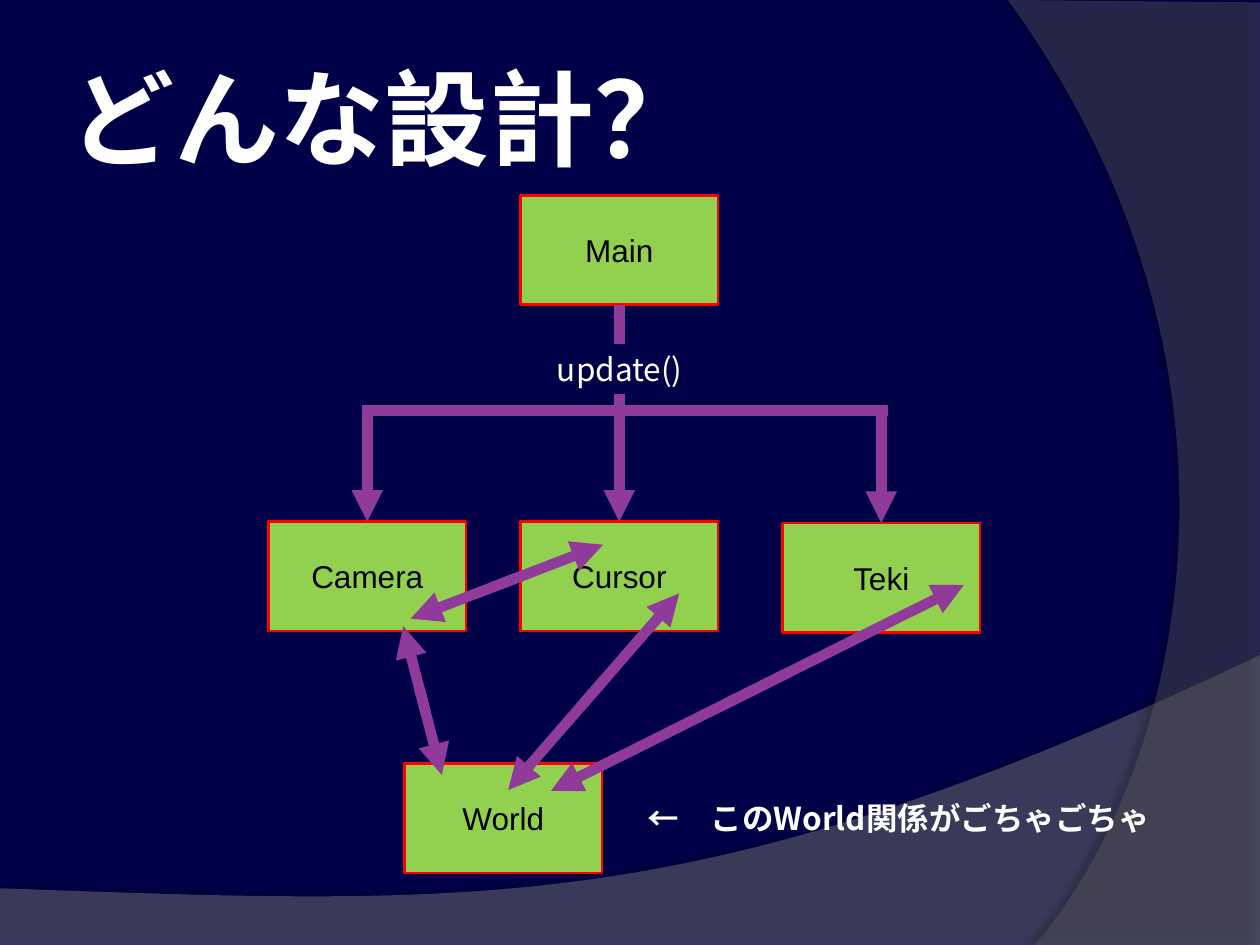
from dataclasses import dataclass
from typing import Any

from lxml.etree import SubElement
from pptx import Presentation
from pptx.dml.color import RGBColor
from pptx.enum.shapes import MSO_CONNECTOR, MSO_SHAPE
from pptx.enum.text import MSO_ANCHOR, MSO_AUTO_SIZE, PP_ALIGN
from pptx.oxml.ns import qn
from pptx.util import Pt

BACKDROP, WHITE, BLACK = "000049", "FFFFFF", "000000"
GREEN, RED, PURPLE = "92D050", "FF0000", "903A9A"
LATIN, JAPANESE = "Arial", "Noto Sans CJK JP"
BOX_WIDTH, BOX_HEIGHT = 113, 62.6
TOP, BOTTOM = 0, 2
HALF_REACH = 0.58
CURVE_STEPS = 60

Point = tuple[float, float]


@dataclass
class ClassBox:
    name: str
    left: float
    top: float

    @property
    def top_middle(self) -> Point:
        return self.left + BOX_WIDTH / 2, self.top

    @property
    def bottom_middle(self) -> Point:
        return self.left + BOX_WIDTH / 2, self.top + BOX_HEIGHT


@dataclass
class Swoosh:
    corners: list[Point]
    curve: tuple[Point, Point, Point, Point]
    fill: str
    opacity: int
    shadow_opacity: int
    shadow_distance: float
    shadow_angle: int


@dataclass
class Relation:
    start: Point
    end: Point


MAIN = ClassBox("Main", 297.4, 111.6)
CAMERA = ClassBox("Camera", 153.4, 298.1)
CURSOR = ClassBox("Cursor", 297.4, 298.1)
TEKI = ClassBox("Teki", 447.1, 298.8)
WORLD = ClassBox("World", 231.1, 436.3)

SWOOSHES = [
    Swoosh([(0, 540), (720, 540)],
           ((720, 374.4), (402.5, 524.9), (281.5, 517.7), (0, 507.6)),
           "7F7F7F", 45, 35, 3.5, 270),
    Swoosh([(720, 1.4), (720, 540)],
           ((591.1, 540), (673.2, 445.7), (733, 216), (576, 0)),
           "5E5E5E", 40, 45, 4, 180),
]

RELATIONS = [
    Relation((252.5, 442.8), (230.4, 357.8)),
    Relation((314.8, 452), (550.8, 334.3)),
    Relation((290.4, 451.5), (388.1, 339.1)),
    Relation((234.7, 353.5), (344.6, 311.3)),
]


def color(hex_code: str) -> RGBColor:
    return RGBColor.from_string(hex_code)


def paint(fill: Any, hex_code: str) -> None:
    fill.solid()
    fill.fore_color.rgb = color(hex_code)


def write(frame: Any, words: str, size: float, face: str, hex_code: str,
          align: PP_ALIGN, bold: bool = False) -> None:
    frame.word_wrap = True
    frame.text = words
    paragraph = frame.paragraphs[0]
    paragraph.alignment = align
    font = paragraph.font
    font.size, font.bold, font.name = Pt(size), bold, face
    font.color.rgb = color(hex_code)
    defaults = paragraph._p.get_or_add_pPr().get_or_add_defRPr()
    SubElement(defaults, qn("a:ea"), typeface=face)


def bezier(curve: tuple[Point, Point, Point, Point]) -> list[Point]:
    points = []
    for step in range(CURVE_STEPS + 1):
        t = step / CURVE_STEPS
        weights = ((1 - t) ** 3, 3 * t * (1 - t) ** 2, 3 * t * t * (1 - t), t ** 3)
        x, y = (sum(w * p[axis] for w, p in zip(weights, curve)) for axis in (0, 1))
        points.append((x, y))
    return points


def draw_swoosh(shapes: Any, swoosh: Swoosh) -> None:
    outline = [(Pt(x), Pt(y)) for x, y in swoosh.corners + bezier(swoosh.curve)]
    builder = shapes.build_freeform(*outline[0])
    builder.add_line_segments(outline[1:], close=True)
    shape = builder.convert_to_shape()
    paint(shape.fill, swoosh.fill)
    shape.line.fill.background()
    shape.shadow.inherit = False
    properties = shape._element.spPr
    fill_color = properties.find(qn("a:solidFill")).find(qn("a:srgbClr"))
    SubElement(fill_color, qn("a:alpha"), val=str(swoosh.opacity * 1000))
    shadow = SubElement(
        properties.find(qn("a:effectLst")), qn("a:outerShdw"),
        blurRad=str(Pt(4)), dist=str(Pt(swoosh.shadow_distance)),
        dir=str(swoosh.shadow_angle * 60000), rotWithShape="0")
    shadow_color = SubElement(shadow, qn("a:srgbClr"), val=BLACK)
    SubElement(shadow_color, qn("a:alpha"), val=str(swoosh.shadow_opacity * 1000))


def draw_box(shapes: Any, box: ClassBox) -> Any:
    shape = shapes.add_shape(MSO_SHAPE.RECTANGLE, Pt(box.left), Pt(box.top),
                             Pt(BOX_WIDTH), Pt(BOX_HEIGHT))
    paint(shape.fill, GREEN)
    shape.line.color.rgb = color(RED)
    shape.line.width = Pt(1.5)
    shape.shadow.inherit = False
    shape.text_frame.vertical_anchor = MSO_ANCHOR.MIDDLE
    write(shape.text_frame, box.name, 18, LATIN, BLACK, PP_ALIGN.CENTER)
    return shape


def draw_line(shapes: Any, start: Point, end: Point, arrow: bool = False) -> Any:
    line = shapes.add_connector(MSO_CONNECTOR.STRAIGHT,
                                *(Pt(value) for value in start + end))
    line.line.color.rgb = color(PURPLE)
    line.line.width = Pt(6)
    if arrow:
        SubElement(line.line._get_or_add_ln(), qn("a:tailEnd"), type="triangle")
    SubElement(line._element.spPr, qn("a:effectLst"))
    return line


def draw_relation(shapes: Any, relation: Relation) -> None:
    halves = shapes.add_group_shape().shapes
    for tip, other in ((relation.start, relation.end), (relation.end, relation.start)):
        inner = (tip[0] + HALF_REACH * (other[0] - tip[0]),
                 tip[1] + HALF_REACH * (other[1] - tip[1]))
        draw_line(halves, inner, tip, arrow=True)


def draw_label(shapes: Any, words: str, left: float, top: float, width: float,
               align: PP_ALIGN, bold: bool = False) -> None:
    label = shapes.add_textbox(Pt(left), Pt(top), Pt(width), Pt(29))
    write(label.text_frame, words, 18, JAPANESE, WHITE, align, bold)
    label.text_frame.auto_size = MSO_AUTO_SIZE.SHAPE_TO_FIT_TEXT


def draw_title(title: Any) -> None:
    title.left, title.top, title.width, title.height = (
        Pt(36), Pt(21.6), Pt(588), Pt(90))
    frame = title.text_frame
    frame.auto_size = MSO_AUTO_SIZE.NONE
    frame.vertical_anchor = MSO_ANCHOR.MIDDLE
    frame.margin_left = frame.margin_right = Pt(3.6)
    frame.margin_top = frame.margin_bottom = Pt(3.6)
    write(frame, "どんな設計？", 60, JAPANESE, WHITE, PP_ALIGN.LEFT, bold=True)


def main() -> None:
    deck = Presentation()
    deck.slide_width, deck.slide_height = Pt(720), Pt(540)
    slide = deck.slides.add_slide(deck.slide_layouts[5])
    shapes = slide.shapes
    paint(slide.background.fill, BACKDROP)
    for swoosh in SWOOSHES:
        draw_swoosh(shapes, swoosh)
    draw_title(shapes.title)

    main_box = draw_box(shapes, MAIN)
    stem = draw_line(shapes, MAIN.bottom_middle, (MAIN.bottom_middle[0], 196.6))
    stem.begin_connect(main_box, BOTTOM)
    draw_label(shapes, "update()", 229.7, 196.6, 249, PP_ALIGN.CENTER)
    draw_line(shapes, (507.5, 234.5), (206.7, 234.5))
    for box, branch_top in ((CAMERA, 232.8), (CURSOR, 225.4), (TEKI, 233.3)):
        child = draw_box(shapes, box)
        branch = draw_line(shapes, (box.top_middle[0], branch_top),
                           box.top_middle, arrow=True)
        branch.end_connect(child, TOP)

    draw_box(shapes, WORLD)
    for relation in RELATIONS:
        draw_relation(shapes, relation)
    draw_label(shapes, "←　このWorld関係がごちゃごちゃ", 363, 453, 317.5,
               PP_ALIGN.LEFT, bold=True)
    deck.save("out.pptx")


if __name__ == "__main__":
    main()
